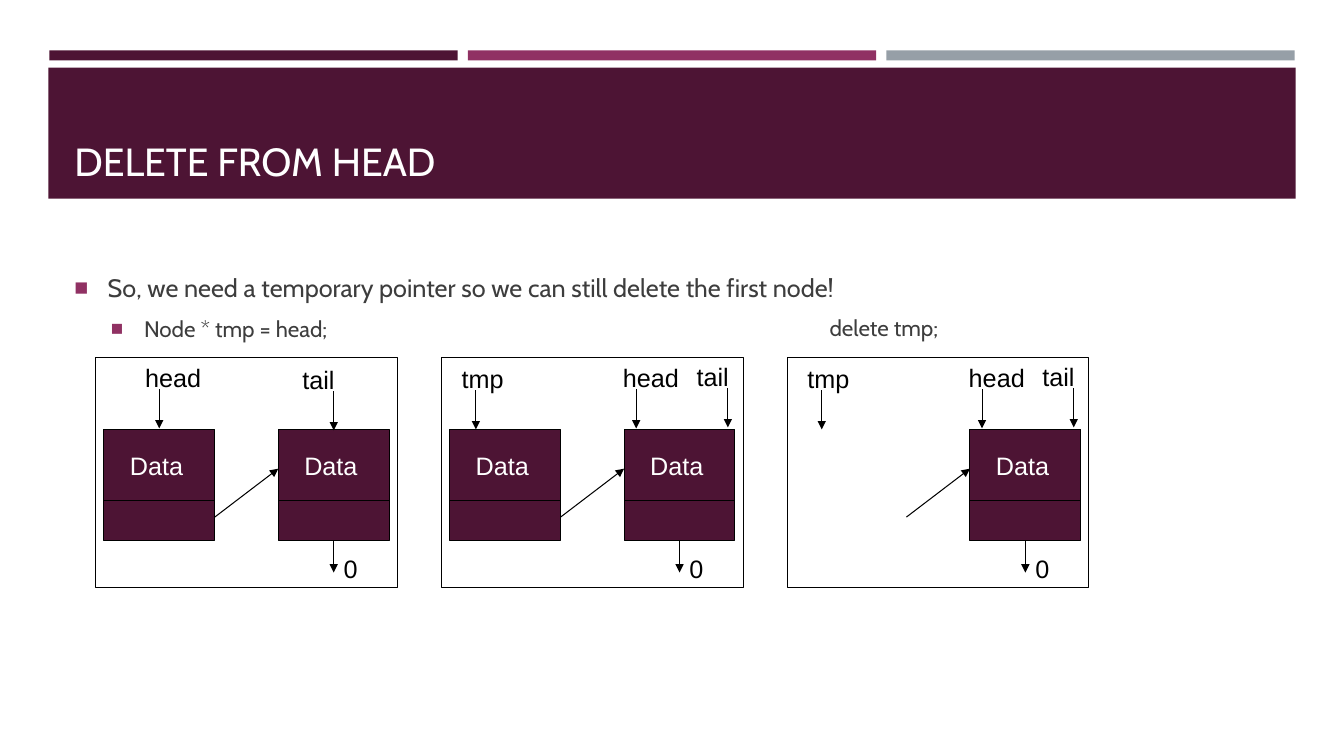
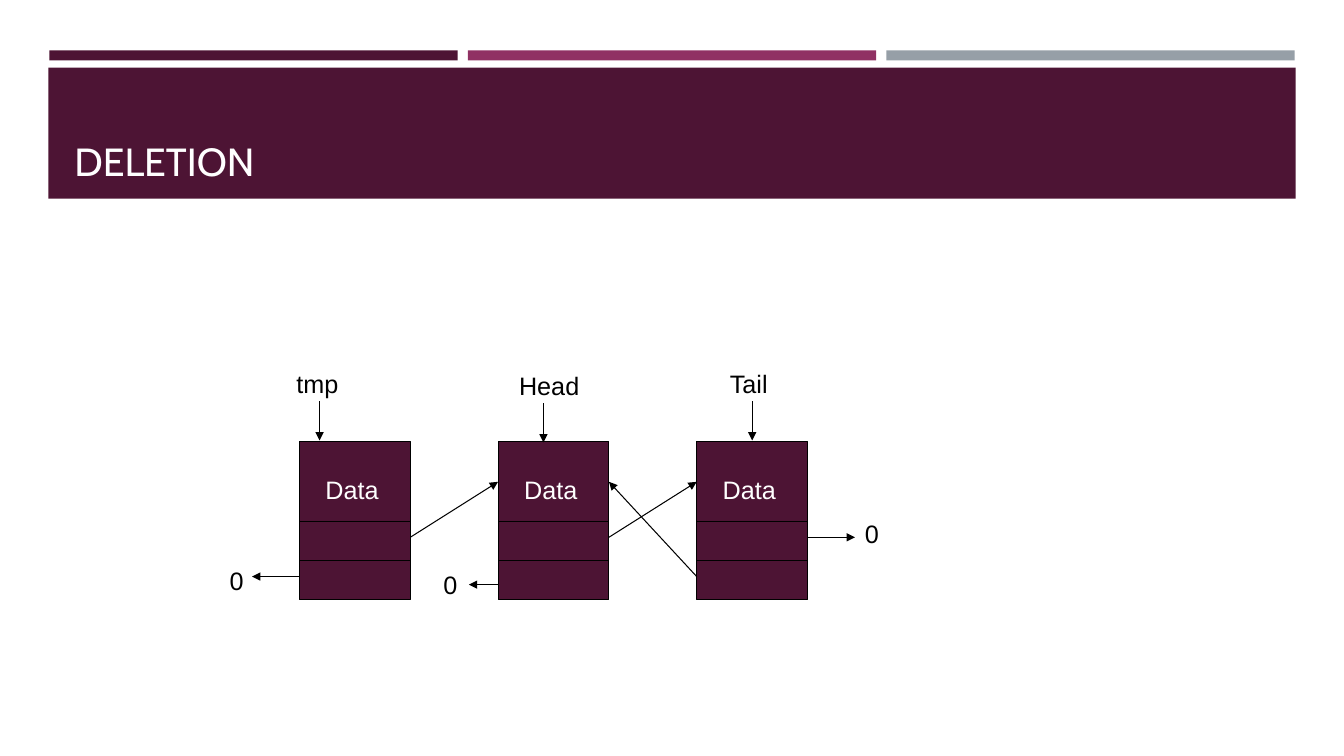
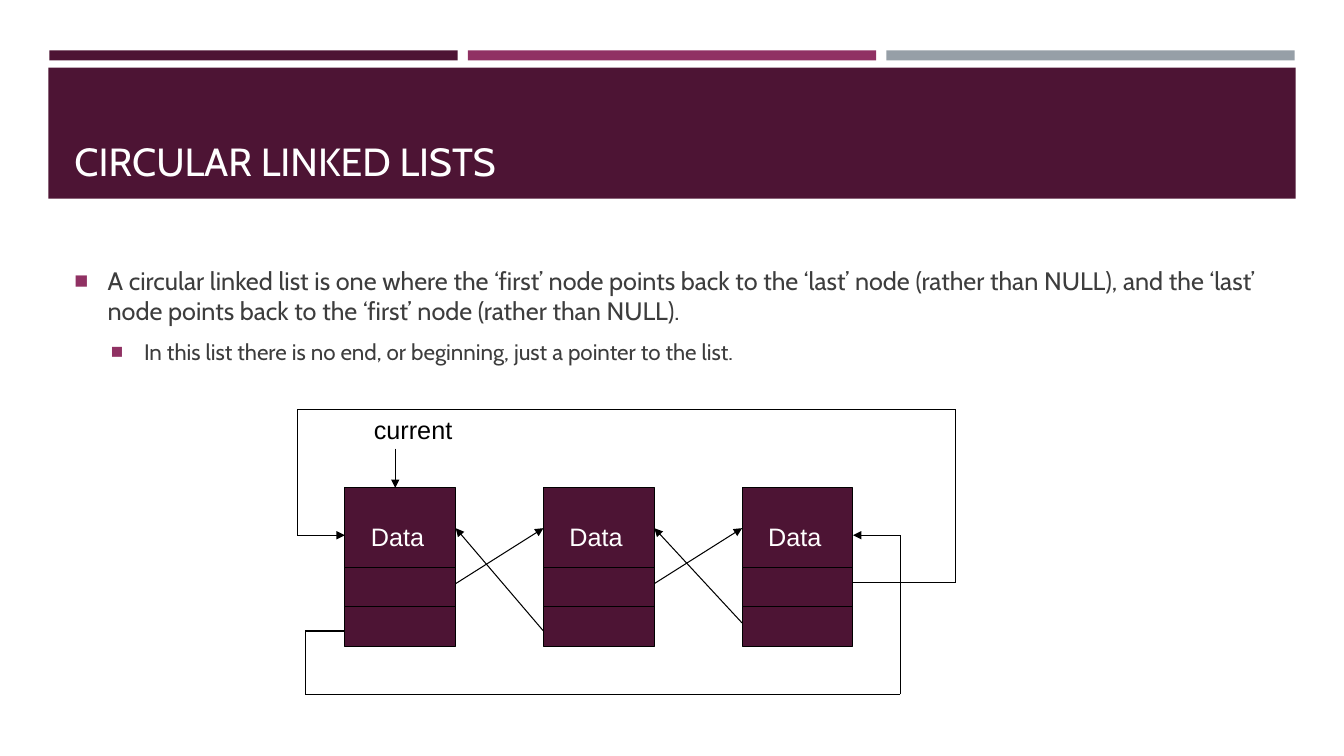
from itertools import pairwise

from lxml import etree
from pptx import Presentation
from pptx.dml.color import RGBColor
from pptx.enum.shapes import MSO_CONNECTOR as CONN, MSO_SHAPE as SHAPE
from pptx.enum.text import MSO_ANCHOR as ANCHOR
from pptx.oxml.ns import qn
from pptx.util import Inches, Pt

PLUM = RGBColor(0x4D, 0x14, 0x34)
MAGENTA = RGBColor(0x90, 0x31, 0x63)
GREY = RGBColor(0x96, 0x9F, 0xA7)
INK = RGBColor(0x3D, 0x3D, 0x3D)
BLACK = RGBColor(0, 0, 0)
WHITE = RGBColor(0xFF, 0xFF, 0xFF)

TEXT_FONT, LABEL_FONT = "Cabin", "Arial"
LABEL_WIDTH = {"Data": 0.73, "head": 0.76, "tail": 0.52, "tmp": 0.62, "0": 0.34,
               "Head": 0.8, "Tail": 0.58, "current": 0.99}
LABEL_H = 0.4
LINK_H = 0.39
NODE_W = 1.1
ARROW_LEN = 0.39
ROW_STEP = 1.97
ROW_NODE = dict(data_h=0.79, links=2, text_top=0.28)
NEXT_Y, PREV_Y, TARGET_Y = 0.95, 1.34, 0.4


def add_run(p, text, font, size, color):
    r = p.add_run()
    r.text = text
    r.font.name, r.font.size = font, Pt(size)
    r.font.color.rgb = color


def add_rect(shapes, left, top, width, height, fill=None, line=None):
    sp = shapes.add_shape(SHAPE.RECTANGLE, Inches(left), Inches(top),
                          Inches(width), Inches(height))
    sp.shadow.inherit = False
    if fill is None:
        sp.fill.background()
    else:
        sp.fill.solid()
        sp.fill.fore_color.rgb = fill
    if line is None:
        sp.line.fill.background()
    else:
        sp.line.color.rgb = line
        sp.line.width = Pt(0.75)


def add_line(shapes, start, end, arrow=False):
    sp = shapes.add_connector(CONN.STRAIGHT, *map(Inches, (*start, *end)))
    sp.line.color.rgb = BLACK
    sp.line.width = Pt(0.75)
    if arrow:
        ln = sp.line._get_or_add_ln()
        etree.SubElement(ln, qn("a:tailEnd"), type="triangle")
    etree.SubElement(sp._element.spPr, qn("a:effectLst"))


def add_route(shapes, points):
    """Draw straight legs through the points, with an arrowhead on the last."""
    legs = list(pairwise(points))
    for i, (start, end) in enumerate(legs, 1):
        add_line(shapes, start, end, arrow=i == len(legs))


def add_text_box(shapes, left, top, width, height, wrap=True):
    tf = shapes.add_textbox(Inches(left), Inches(top),
                            Inches(width), Inches(height)).text_frame
    tf.word_wrap = wrap
    return tf


def add_label(shapes, text, left, top, color=BLACK):
    tf = add_text_box(shapes, left, top, LABEL_WIDTH[text], LABEL_H, wrap=False)
    add_run(tf.paragraphs[0], text, LABEL_FONT, 18, color)


def add_pointer(shapes, name, left, top, arrow_x, gap=0.31):
    """Place a named pointer with its short arrow going down."""
    add_label(shapes, name, left, top)
    start = top + gap
    add_line(shapes, (arrow_x, start), (arrow_x, start + ARROW_LEN), arrow=True)


def add_node(shapes, left, top, data_h, links, text_top):
    """Group a data cell with the link cells below it."""
    cells = shapes.add_group_shape().shapes
    add_rect(cells, left, top, NODE_W, data_h + links * LINK_H, PLUM, BLACK)
    for i in range(links):
        y = top + data_h + i * LINK_H
        add_line(cells, (left, y), (left + NODE_W, y))
    add_label(cells, "Data", left + 0.16, top + text_top, WHITE)


def add_node_row(shapes, left, top):
    """Draw three two-way nodes with their next links; return their left edges."""
    lefts = [left + i * ROW_STEP for i in range(3)]
    for x in lefts:
        add_node(shapes, x, top, **ROW_NODE)
    for x, following in pairwise(lefts):
        add_line(shapes, (x + NODE_W, top + NEXT_Y), (following, top + TARGET_Y), True)
    return lefts


def add_bullets(shapes, top, items):
    """Write (level, text) items as square-bulleted paragraphs."""
    tf = add_text_box(shapes, 0.64, top, 12.06, 1)
    for i, (level, text) in enumerate(items):
        p = tf.add_paragraph() if i else tf.paragraphs[0]
        size = (18, 16)[level]
        p.level = level
        p.space_after = Pt(6)
        if i:
            p.space_before = Pt(size * 0.2)
        pPr = p._p.get_or_add_pPr()
        pPr.set("marL", str(Inches((0.33, 0.69)[level])))
        pPr.set("indent", str(Inches(-0.33)))
        color = etree.SubElement(pPr, qn("a:buClr"))
        etree.SubElement(color, qn("a:srgbClr"), val=str(MAGENTA))
        etree.SubElement(pPr, qn("a:buSzPct"), val="92000")
        etree.SubElement(pPr, qn("a:buFont"), typeface=LABEL_FONT)
        etree.SubElement(pPr, qn("a:buChar"), char="■")
        add_run(p, text, TEXT_FONT, size, INK)


def new_slide(prs, title):
    """Add a slide with the shared bands and title; return its shapes."""
    shapes = prs.slides.add_slide(prs.slide_layouts[6]).shapes
    for i, color in enumerate((PLUM, MAGENTA, GREY)):
        add_rect(shapes, 0.49 + i * 4.15, 0.5, 4.05, 0.1, color)
    add_rect(shapes, 0.48, 0.67, 12.37, 1.3, PLUM)
    tf = add_text_box(shapes, 0.64, 0.77, 12.06, 1.11)
    tf.vertical_anchor = ANCHOR.BOTTOM
    add_run(tf.paragraphs[0], title, TEXT_FONT, 28, WHITE)
    return shapes


def add_list_panel(shapes, left, top, pointers, first_node=True):
    """Frame one step of the deletion; pointers hold offsets in the frame."""
    add_rect(shapes, left, top, 2.99, 2.28, line=BLACK)
    first, second, node_top = left + 0.08, left + 1.81, top + 0.71
    for x in (first, second) if first_node else (second,):
        add_node(shapes, x, node_top, data_h=0.71, links=1, text_top=0.16)
    add_line(shapes, (first + NODE_W, node_top + 0.87), (second, node_top + 0.39), True)
    middle, bottom = second + NODE_W / 2, node_top + 1.1
    add_line(shapes, (middle, bottom), (middle, bottom + 0.32), True)
    add_label(shapes, "0", middle, bottom + 0.08)
    for name, dx, dy, arrow_dx in pointers:
        add_pointer(shapes, name, left + dx, top + dy, left + arrow_dx)


def build_delete_from_head(prs):
    shapes = new_slide(prs, "DELETE FROM HEAD")
    add_bullets(shapes, 2.65, [
        (0, "So, we need a temporary pointer so we can still delete the first node!"),
        (1, "Node * tmp = head;"),
    ])
    tf = add_text_box(shapes, 8.13, 3.07, 2, 0.36)
    add_run(tf.paragraphs[0], "delete tmp;", TEXT_FONT, 16, INK)

    before = [("head", 0.39, 0, 0.63), ("tail", 1.95, 0.02, 2.36)]
    moved = [("tmp", 0.1, 0.01, 0.34), ("head", 1.7, 0, 1.93), ("tail", 2.43, -0.01, 2.84)]
    for i, pointers in enumerate((before, moved, moved)):
        add_list_panel(shapes, 0.95 + i * 3.43, 3.55, pointers, first_node=i < 2)


def build_deletion(prs):
    shapes = new_slide(prs, "DELETION")
    top = 4.38
    first, second, third = add_node_row(shapes, 2.97, top)
    last_right = third + NODE_W
    for start, end, y in ((first, 2.5, top + PREV_Y), (second, 4.65, 5.8),
                          (last_right, 8.48, top + NEXT_Y)):
        add_line(shapes, (start, y), (end, y), True)
    add_line(shapes, (third, top + PREV_Y), (second + NODE_W, top + TARGET_Y), True)
    for left, y in ((2.18, 5.56), (4.3, 5.6), (8.48, 5.09)):
        add_label(shapes, "0", left, y)
    for name, left, y, arrow_x in (("tmp", 2.84, 3.6, 3.17), ("Head", 5.05, 3.62, 5.39),
                                   ("Tail", 7.14, 3.6, 7.46)):
        add_pointer(shapes, name, left, y, arrow_x, gap=0.38)


def build_circular_lists(prs):
    shapes = new_slide(prs, "CIRCULAR LINKED LISTS")
    add_bullets(shapes, 2.58, [
        (0, "A circular linked list is one where the ‘first’ node points back to the "
            "‘last’ node (rather than NULL), and the ‘last’ node points back to the "
            "‘first’ node (rather than NULL)."),
        (1, "In this list there is no end, or beginning, just a pointer to the list."),
    ])
    top = 4.84
    first, second, third = add_node_row(shapes, 3.42, top)
    last_right = third + NODE_W
    for start, end, dy in ((second, first, 1.42), (third, second, PREV_Y)):
        add_line(shapes, (start, top + dy), (end + NODE_W, top + TARGET_Y), True)
    add_pointer(shapes, "current", 3.61, 4.06, 3.92, gap=0.39)

    entry_y, next_y, prev_y = 5.31, 5.78, 6.26
    add_route(shapes, [(last_right, next_y), (9.48, next_y), (9.48, 4.06),
                       (2.95, 4.06), (2.95, entry_y), (first, entry_y)])
    add_route(shapes, [(first, prev_y), (3.03, prev_y), (3.03, 6.89),
                       (8.93, 6.89), (8.93, entry_y), (last_right, entry_y)])


def main():
    prs = Presentation()
    prs.slide_width, prs.slide_height = Inches(13.33), Inches(7.5)
    build_delete_from_head(prs)
    build_deletion(prs)
    build_circular_lists(prs)
    prs.save("out.pptx")


if __name__ == "__main__":
    main()
